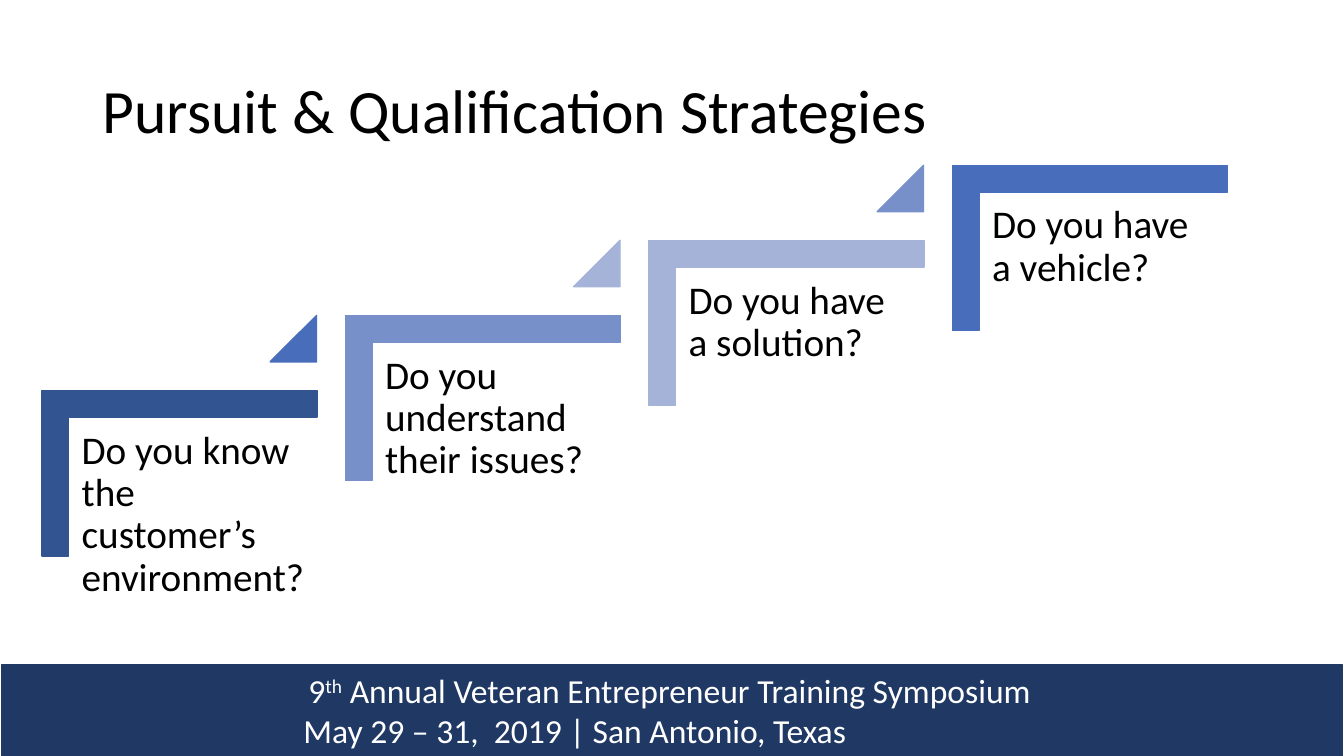
from pptx import Presentation
from pptx.dml.color import RGBColor
from pptx.enum.shapes import MSO_SHAPE
from pptx.enum.text import MSO_ANCHOR, MSO_AUTO_SIZE, PP_ALIGN
from pptx.util import Inches, Pt

RECT = MSO_SHAPE.RECTANGLE
CORNER = MSO_SHAPE.CORNER
WEDGE = MSO_SHAPE.ISOSCELES_TRIANGLE
MIDDLE = MSO_ANCHOR.MIDDLE
LEFT = PP_ALIGN.LEFT
NO_FIT = MSO_AUTO_SIZE.NONE

NAVY, BLACK, WHITE = "203864", "000000", "FFFFFF"
STEPS = [
    ("Do you know the customer’s environment?", "325491", "476DBB"),
    ("Do you understand their issues?", "7790C9", "A6B3D9"),
    ("Do you have a solution?", "A6B3D9", "7790C9"),
    ("Do you have a vehicle?", "476DBB", None),
]
RUN, RISE = 3.01, 0.745  # shift from one step to the next


def block(shapes, kind, color, *box):
    """Add a preset shape with fill and line of one color; box is in inches."""
    shape = shapes.add_shape(kind, *map(Inches, box))
    shape.shadow.inherit = False
    shape.fill.solid()
    shape.fill.fore_color.rgb = RGBColor.from_string(color)
    shape.line.color.rgb = RGBColor.from_string(color)
    shape.line.width = Pt(1)
    return shape


def write(para, text, size, color=BLACK, space=None, indent=0, raised=False):
    para.alignment = LEFT
    if space:
        para.line_spacing = space
    if indent:
        para._p.get_or_add_pPr().set("marL", str(Inches(indent)))
    run = para.add_run()
    run.text = text
    run.font.name = "Calibri"
    run.font.size = Pt(size)
    run.font.color.rgb = RGBColor.from_string(color)
    if raised:
        run.font._element.set("baseline", "30000")


deck = Presentation()
deck.slide_width, deck.slide_height = Inches(13.33), Inches(7.5)
slide = deck.slides.add_slide(deck.slide_layouts[5])

# Footer band
band = block(slide.shapes, RECT, NAVY, 0.02, 6.59, 13.29, 0.91).text_frame
band.word_wrap = True
band.vertical_anchor = MIDDLE
first, second = band.paragraphs[0], band.add_paragraph()
for text, raised in [("9", False), ("th", True),
                     (" Annual Veteran Entrepreneur Training Symposium", False)]:
    write(first, text, 24, WHITE, indent=2.94, raised=raised)
write(second, "May 29 – 31,  2019 | San Antonio, Texas", 24, WHITE, indent=2.89)

# Title
title = slide.shapes.title
title.left, title.top = Inches(0.92), Inches(0.4)
title.width, title.height = Inches(11.5), Inches(1.45)
head = title.text_frame
head.auto_size = NO_FIT
head.vertical_anchor = MIDDLE
write(head.paragraphs[0], "Pursuit & Qualification Strategies", 44, space=0.9)

# Rising steps
stairs = slide.shapes.add_group_shape().shapes
for i, (text, color, next_color) in enumerate(STEPS):
    x, y = i * RUN, -i * RISE
    angle = block(stairs, CORNER, color, 0.96 + x, 3.33 + y, 1.64, 2.73)
    angle.rotation = 90
    angle.adjustments[0] = angle.adjustments[1] = 0.161

    label = stairs.add_textbox(Inches(0.69 + x), Inches(4.15 + y),
                               Inches(2.46), Inches(2.16)).text_frame
    label.word_wrap = True
    label.margin_left = label.margin_right = Inches(0.12)
    label.margin_top = label.margin_bottom = Inches(0.12)
    write(label.paragraphs[0], text, 28, space=0.9)

    if next_color:
        wedge = block(stairs, WEDGE, next_color, 2.68 + x, 3.13 + y, 0.46, 0.46)
        wedge.adjustments[0] = 1

deck.save("out.pptx")
